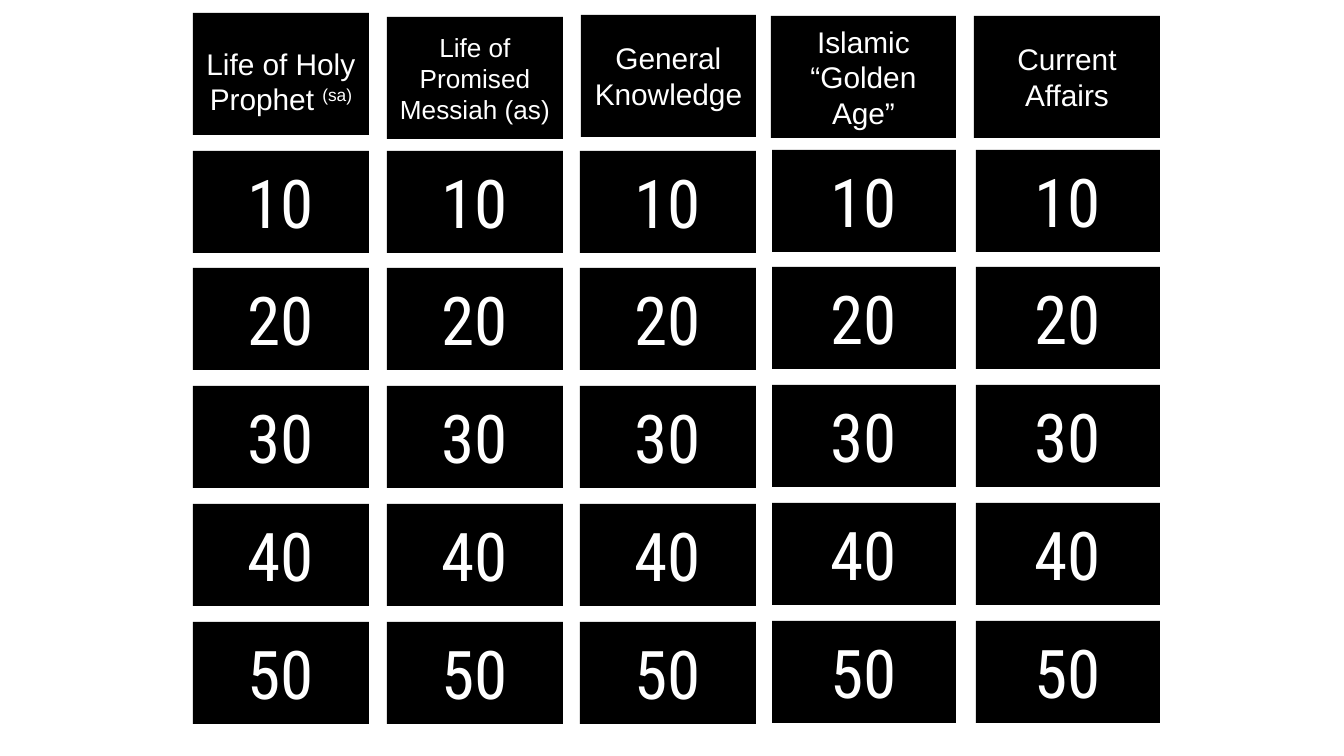
from pptx import Presentation
from pptx.dml.color import RGBColor
from pptx.enum.shapes import MSO_SHAPE
from pptx.enum.text import MSO_ANCHOR, PP_ALIGN
from pptx.util import Pt

EMU_PER_PX = 914400 / 134.4
COLORS = {"tile": "000000", "text": "FFFFFF"}
POINTS = ["10", "20", "30", "40", "50"]
TILE_HEIGHT = 102
HEADER_HEIGHT = 122
INSET = 10


def px(length):
    return round(length * EMU_PER_PX)


def add_text(paragraph, text, size=16, font="Arial", superscript=False):
    run = paragraph.add_run()
    run.text = text
    run.font.size = Pt(size)
    run.font.name = font
    run.font.color.rgb = RGBColor.from_string(COLORS["text"])
    if superscript:
        run._r.get_or_add_rPr().set("baseline", "30000")


def add_tile(slide, box, text_drop=0):
    shape = slide.shapes.add_shape(MSO_SHAPE.RECTANGLE, *map(px, box))
    shape.shadow.inherit = False
    shape.fill.solid()
    shape.fill.fore_color.rgb = RGBColor.from_string(COLORS["tile"])
    shape.line.fill.background()
    frame = shape.text_frame
    frame.word_wrap = True
    frame.vertical_anchor = MSO_ANCHOR.MIDDLE
    frame.margin_left = frame.margin_right = px(INSET)
    frame.margin_top = px(INSET + 2 * text_drop)
    frame.margin_bottom = px(INSET)
    paragraph = frame.paragraphs[0]
    paragraph.alignment = PP_ALIGN.CENTER
    return paragraph


def add_header(slide, box, title, honorific="", size=16, text_drop=0):
    paragraph = add_tile(slide, box, text_drop)
    add_text(paragraph, title, size=size)
    if honorific:
        add_text(paragraph, honorific, size=size, superscript=True)


def add_point_column(slide, box):
    left, top, width, height = box
    for row, points in enumerate(POINTS):
        offset = (height - TILE_HEIGHT) * row // (len(POINTS) - 1)
        paragraph = add_tile(slide, (left, top + offset, width, TILE_HEIGHT))
        add_text(paragraph, points, size=36, font="Roboto Condensed")


def add_board(slide, box):
    left, top, height = box
    columns = [
        (0, 0, 0, 138, 176, {"title": "Life of Holy Prophet ", "honorific": "(sa)", "text_drop": 7}),
        (194, 194, 4, 138, 176, {"title": "Life of Promised Messiah (as)", "size": 14}),
        (388, 387, 2, 138, 176, {"title": "General Knowledge"}),
        (578, 579, 3, 137, 184, {"title": "Islamic “Golden Age”"}),
        (781, 783, 3, 137, 184, {"title": "Current Affairs"}),
    ]
    for header_left, tile_left, header_top, tile_top, width, header in columns:
        right = tile_left + width
        header_box = (left + header_left, top + header_top, right - header_left, HEADER_HEIGHT)
        add_header(slide, header_box, **header)
        add_point_column(slide, (left + tile_left, top + tile_top, width, height - 138))


def main():
    presentation = Presentation()
    presentation.slide_width = px(1344)
    presentation.slide_height = px(756)
    slide = presentation.slides.add_slide(presentation.slide_layouts[6])
    add_board(slide, (193, 13, 711))
    presentation.save("out.pptx")


if __name__ == "__main__":
    main()
